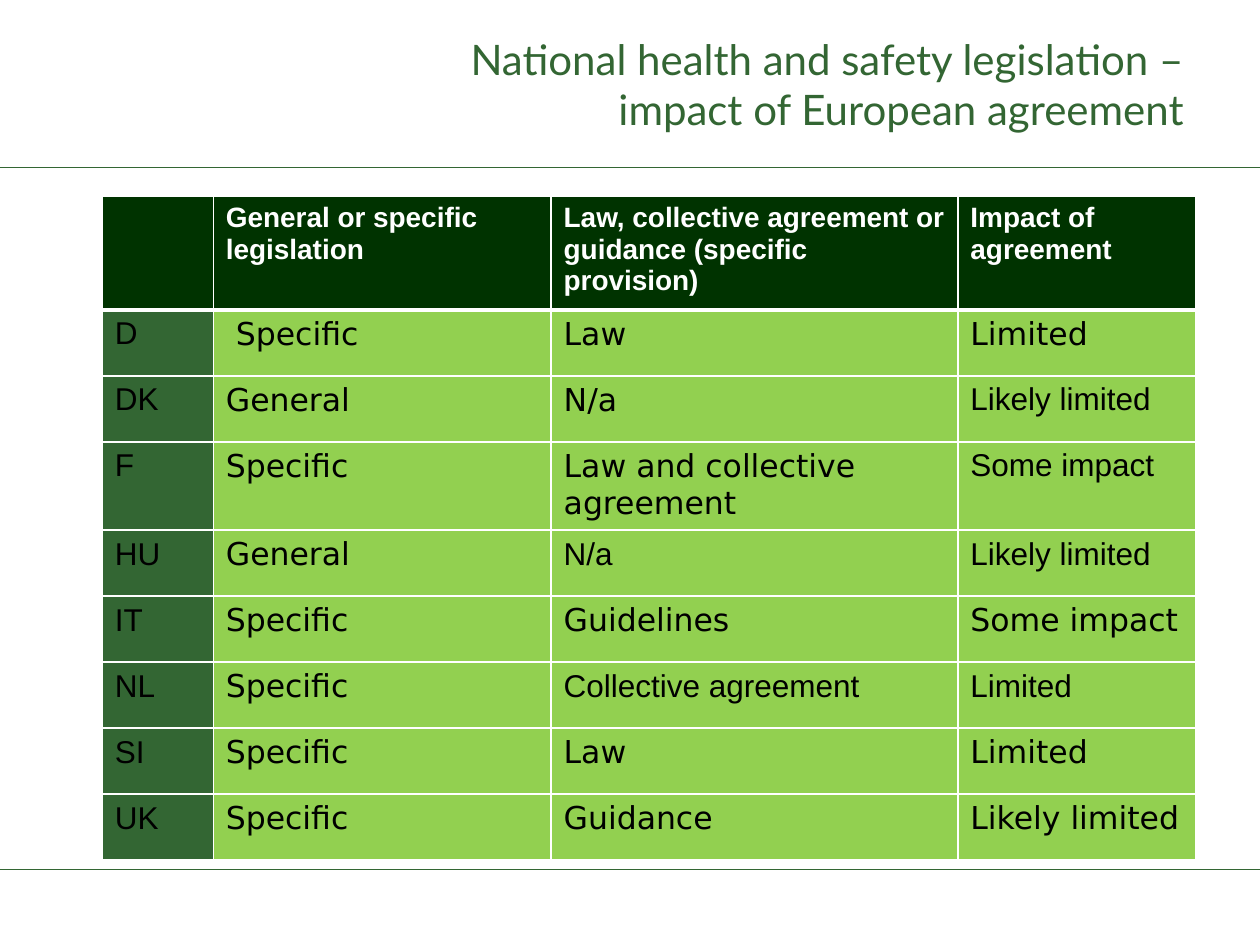
"""Build a slide comparing how a European agreement affected national safety legislation."""
from dataclasses import dataclass

from lxml import etree
from pptx import Presentation
from pptx import util as u
from pptx.dml import color
from pptx.enum import shapes, text
from pptx.oxml import ns


@dataclass(frozen=True)
class Theme:
    green: str = "336633"
    dark: str = "003300"
    lime: str = "92D050"
    white: str = "FFFFFF"
    black: str = "000000"
    title_font: str = "Lato"
    plain_font: str = "Arial"
    wide_font: str = "DejaVu Sans"
    title_size: int = 24
    header_size: int = 16
    body_size: int = 18


theme = Theme()


def add_run(para, words, font, size, hue, bold=False):
    span = para.add_run()
    span.text = words
    span.font.name = font
    span.font.size = u.Pt(size)
    span.font.bold = bold
    span.font.color.rgb = color.RGBColor.from_string(hue)


def style_cell(cell, hue, top, bottom):
    cell.fill.solid()
    cell.fill.fore_color.rgb = color.RGBColor.from_string(hue)
    properties = cell._tc.get_or_add_tcPr()
    edges = {"lnL": 1, "lnR": 1, "lnT": top, "lnB": bottom}
    for position, (edge, width) in enumerate(edges.items()):
        line = etree.Element(ns.qn(f"a:{edge}"), w=str(u.Pt(width)))
        fill = etree.SubElement(line, ns.qn("a:solidFill"))
        etree.SubElement(fill, ns.qn("a:srgbClr"), val=theme.white)
        properties.insert(position, line)


deck = Presentation()
deck.slide_width, deck.slide_height = u.Cm(25.4), u.Cm(19.05)
page = deck.slides.add_slide(deck.slide_layouts[6])

for height in (3.38, 17.53):
    rule = page.shapes.add_connector(
        shapes.MSO_CONNECTOR.STRAIGHT, 0, u.Cm(height), deck.slide_width, u.Cm(height))
    rule.line.color.rgb = color.RGBColor.from_string(theme.green)
    rule.line.width = u.Pt(0.75)
    etree.SubElement(rule._element.spPr, ns.qn("a:effectLst"))

title = page.shapes.add_textbox(u.Cm(8.74), u.Cm(0.43), u.Cm(15.37), u.Cm(2.51))
title.text_frame.word_wrap = True
title.text_frame.vertical_anchor = text.MSO_ANCHOR.MIDDLE
heading = title.text_frame.paragraphs[0]
heading.alignment = text.PP_ALIGN.RIGHT
add_run(heading, "National health and safety legislation – impact of European agreement",
        theme.title_font, theme.title_size, theme.green)

headers = ["", "General or specific legislation",
           "Law, collective agreement or guidance (specific provision)", "Impact of agreement"]
countries = [
    ["D", " Specific", "Law", "Limited"],
    ["DK", "General", "N/a", "Likely limited"],
    ["F", "Specific", "Law and collective agreement", "Some impact"],
    ["HU", "General", "N/a", "Likely limited"],
    ["IT", "Specific", "Guidelines", "Some impact"],
    ["NL", "Specific", "Collective agreement", "Limited"],
    ["SI", "Specific", "Law", "Limited"],
    ["UK", "Specific", "Guidance", "Likely limited"],
]
plain_cells = {("DK", 3), ("F", 3), ("HU", 2), ("HU", 3), ("NL", 2), ("NL", 3)}
widths = [2.24, 6.81, 8.2, 4.8]
header_height, row_height = 2.29, 1.33

table = page.shapes.add_table(
    len(countries) + 1, len(headers), u.Cm(2.06), u.Cm(3.96), u.Cm(sum(widths)),
    u.Cm(header_height + row_height * len(countries))).table
for column, width in zip(table.columns, widths):
    column.width = u.Cm(width)
for row in table.rows:
    row.height = u.Cm(row_height)
table.rows[0].height = u.Cm(header_height)

for index, words in enumerate(headers):
    cell = table.cell(0, index)
    style_cell(cell, theme.dark, 1, 3)
    if words:
        add_run(cell.text_frame.paragraphs[0], words, theme.plain_font,
                theme.header_size, theme.white, True)

for number, country in enumerate(countries, 1):
    for index, words in enumerate(country):
        cell = table.cell(number, index)
        style_cell(cell, theme.lime if index else theme.green, 3 if number == 1 else 1, 1)
        plain = index == 0 or (country[0], index) in plain_cells
        add_run(cell.text_frame.paragraphs[0], words,
                theme.plain_font if plain else theme.wide_font, theme.body_size, theme.black)

deck.save("out.pptx")
